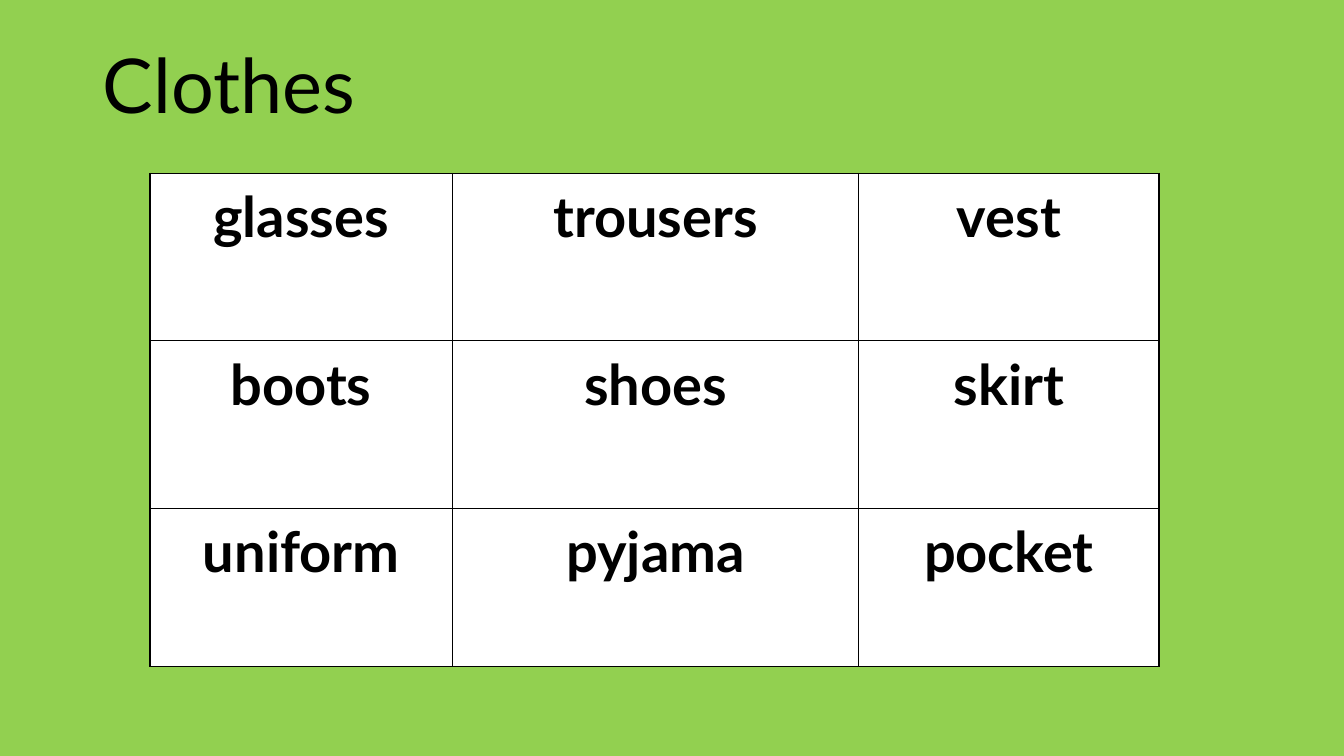
from dataclasses import dataclass

from lxml import etree
from pptx import Presentation
from pptx.dml.color import RGBColor
from pptx.enum.text import MSO_ANCHOR, PP_ALIGN
from pptx.oxml.ns import qn
from pptx.util import Cm, Pt

BOTTOM = MSO_ANCHOR.BOTTOM
TOP = MSO_ANCHOR.TOP
LEFT = PP_ALIGN.LEFT
CENTER = PP_ALIGN.CENTER

TITLE = "Clothes"
WORDS = [
    ["glasses", "trousers", "vest"],
    ["boots", "shoes", "skirt"],
    ["uniform", "pyjama", "pocket"],
]
WIDTHS = [7.62, 10.24, 7.57]
HEIGHTS = [4.22, 4.22, 3.99]


@dataclass(frozen=True)
class Theme:
    font: str = "Lato"
    green: str = "92D050"
    white: str = "FFFFFF"
    black: str = "000000"
    title: int = 54
    word: int = 40
    line: int = 1


THEME = Theme()


def color(code):
    return RGBColor.from_string(code)


def write(frame, text, size, bold, align):
    para = frame.paragraphs[0]
    para.alignment = align
    run = para.add_run()
    run.text = text
    run.font.name = THEME.font
    run.font.size = Pt(size)
    run.font.bold = bold
    run.font.color.rgb = color(THEME.black)
    return para


def border(cell):
    props = cell._tc.get_or_add_tcPr()
    for side in ("a:lnL", "a:lnR", "a:lnT", "a:lnB"):
        line = etree.SubElement(props, qn(side), w=str(Pt(THEME.line)))
        fill = etree.SubElement(line, qn("a:solidFill"))
        etree.SubElement(fill, qn("a:srgbClr"), val=THEME.black)


def add_title(slide):
    box = slide.shapes.add_textbox(Cm(2.34), Cm(0.81), Cm(29.21), Cm(2.59))
    frame = box.text_frame
    frame.word_wrap = True
    frame.vertical_anchor = BOTTOM
    para = write(frame, TITLE, THEME.title, False, LEFT)
    para.line_spacing = 0.9


def add_words(slide):
    table = slide.shapes.add_table(
        len(HEIGHTS), len(WIDTHS), Cm(3.78), Cm(4.37),
        Cm(sum(WIDTHS)), Cm(sum(HEIGHTS)),
    ).table
    table.first_row = False
    table.horz_banding = False
    for col, width in zip(table.columns, WIDTHS):
        col.width = Cm(width)
    for row, height, words in zip(table.rows, HEIGHTS, WORDS):
        row.height = Cm(height)
        for cell, word in zip(row.cells, words):
            cell.margin_left = cell.margin_right = Cm(0.46)
            cell.margin_top = cell.margin_bottom = Cm(0.23)
            cell.vertical_anchor = TOP
            border(cell)
            cell.fill.solid()
            cell.fill.fore_color.rgb = color(THEME.white)
            write(cell.text_frame, word, THEME.word, True, CENTER)


def main():
    deck = Presentation()
    deck.slide_width = Cm(33.87)
    deck.slide_height = Cm(19.05)
    slide = deck.slides.add_slide(deck.slide_layouts[6])
    back = slide.background.fill
    back.solid()
    back.fore_color.rgb = color(THEME.green)
    add_title(slide)
    add_words(slide)
    deck.save("out.pptx")


if __name__ == "__main__":
    main()
